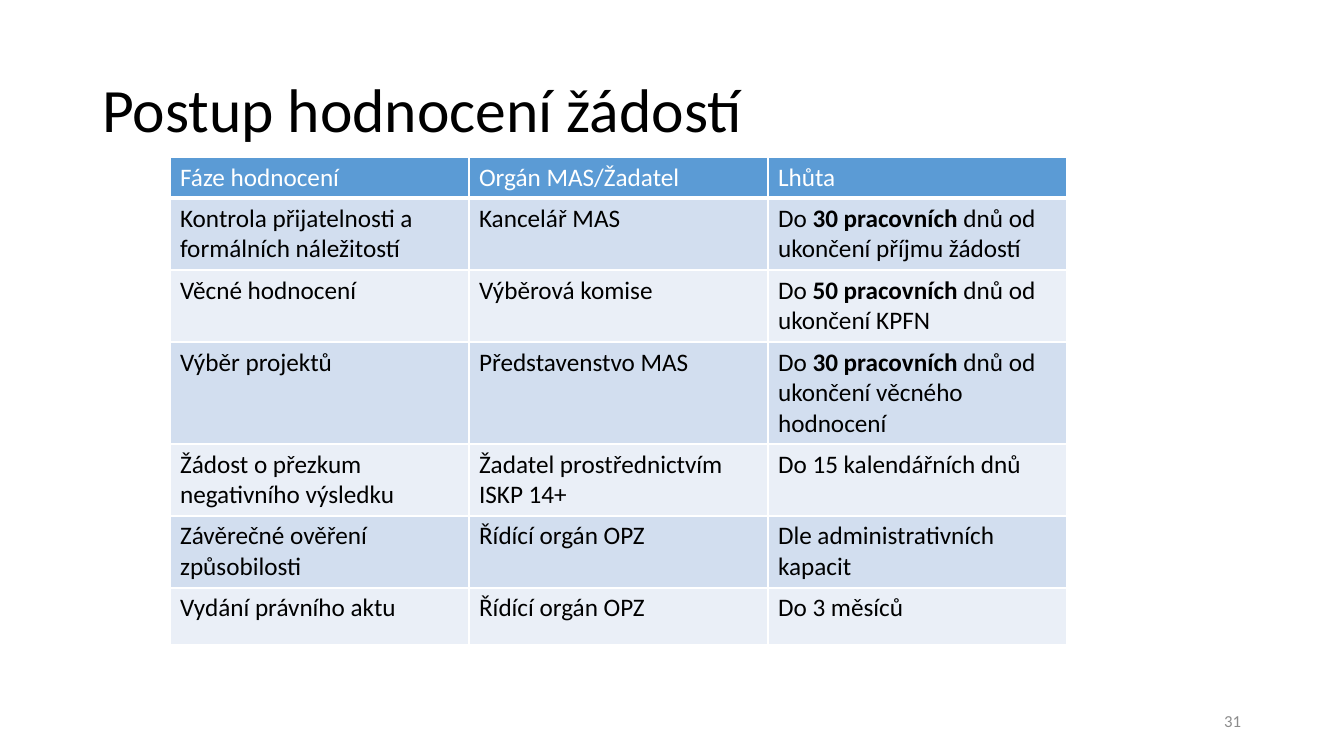
from lxml import etree
from pptx import Presentation
from pptx.dml.color import RGBColor
from pptx.enum.text import MSO_ANCHOR, MSO_AUTO_SIZE, PP_ALIGN
from pptx.oxml.ns import qn
from pptx.util import Emu, Pt

MIDDLE = MSO_ANCHOR.MIDDLE
NO_AUTOFIT = MSO_AUTO_SIZE.NONE
LEFT, RIGHT = PP_ALIGN.LEFT, PP_ALIGN.RIGHT
TITLE_ONLY = 5
EMU_PER_PX = 914400 / 100.8
COLUMN_WIDTH = 299
ROW_HEIGHTS = [41, 72, 72, 102, 72, 72, 57]
HEADER_FILL = "5B9BD5"
BAND_FILLS = ["EAEFF7", "D2DEEF"]

ROWS = [
    [["Fáze hodnocení"], ["Orgán MAS/Žadatel"], ["Lhůta"]],
    [["Kontrola přijatelnosti a formálních náležitostí"], ["Kancelář MAS"],
     ["Do ", "30 pracovních ", "dnů od ukončení příjmu žádostí"]],
    [["Věcné hodnocení"], ["Výběrová komise"],
     ["Do ", "50 pracovních ", "dnů od ukončení KPFN"]],
    [["Výběr projektů"], ["Představenstvo MAS"],
     ["Do ", "30 pracovních ", "dnů od ukončení věcného hodnocení"]],
    [["Žádost o přezkum negativního výsledku"], ["Žadatel prostřednictvím ISKP 14+"],
     ["Do 15 kalendářních dnů"]],
    [["Závěrečné ověření způsobilosti"], ["Řídící orgán OPZ"],
     ["Dle administrativních kapacit"]],
    [["Vydání právního aktu"], ["Řídící orgán OPZ"], ["Do 3 měsíců"]],
]


def px(length):
    return Emu(round(length * EMU_PER_PX))


def format_paragraph(paragraph, size, color, alignment=LEFT):
    paragraph.alignment = alignment
    paragraph.font.name = "Calibri"
    paragraph.font.size = Pt(size)
    paragraph.font.color.rgb = RGBColor.from_string(color)


presentation = Presentation()
presentation.slide_width = px(1344)
presentation.slide_height = px(756)
slide = presentation.slides.add_slide(presentation.slide_layouts[TITLE_ONLY])

title = slide.shapes.title
title.left, title.top, title.width, title.height = px(92), px(40), px(1159), px(146)
title.text_frame.text = "Postup hodnocení žádostí"
title.text_frame.auto_size = NO_AUTOFIT
title.text_frame.vertical_anchor = MIDDLE
title.text_frame.paragraphs[0].line_spacing = 0.9
format_paragraph(title.text_frame.paragraphs[0], 44, "000000")

page_number = slide.shapes.add_textbox(px(949), px(701), px(302), px(40))
page_number.text_frame.word_wrap = True
page_number.text_frame.vertical_anchor = MIDDLE
page_number.text_frame.text = "31"
format_paragraph(page_number.text_frame.paragraphs[0], 12, "8C8C8C", RIGHT)

table = slide.shapes.add_table(
    len(ROWS), 3, px(170), px(157), px(3 * COLUMN_WIDTH), px(sum(ROW_HEIGHTS))
).table
for column in table.columns:
    column.width = px(COLUMN_WIDTH)

for row_index, (row, height) in enumerate(zip(ROWS, ROW_HEIGHTS)):
    table.rows[row_index].height = px(height)
    is_header = row_index == 0
    fill_color = HEADER_FILL if is_header else BAND_FILLS[row_index % 2]
    text_color = "FFFFFF" if is_header else "000000"
    for column_index, parts in enumerate(row):
        cell = table.cell(row_index, column_index)
        properties = cell._tc.get_or_add_tcPr()
        for side in ("lnL", "lnR", "lnT", "lnB"):
            width = Pt(3 if is_header and side == "lnB" else 1)
            border = etree.SubElement(properties, qn(f"a:{side}"), w=str(width))
            border_fill = etree.SubElement(border, qn("a:solidFill"))
            etree.SubElement(border_fill, qn("a:srgbClr"), val="FFFFFF")
        cell.fill.solid()
        cell.fill.fore_color.rgb = RGBColor.from_string(fill_color)
        paragraph = cell.text_frame.paragraphs[0]
        format_paragraph(paragraph, 18, text_color)
        for part_index, part in enumerate(parts):
            run = paragraph.add_run()
            run.text = part
            run.font.bold = part_index == 1

presentation.save("out.pptx")
